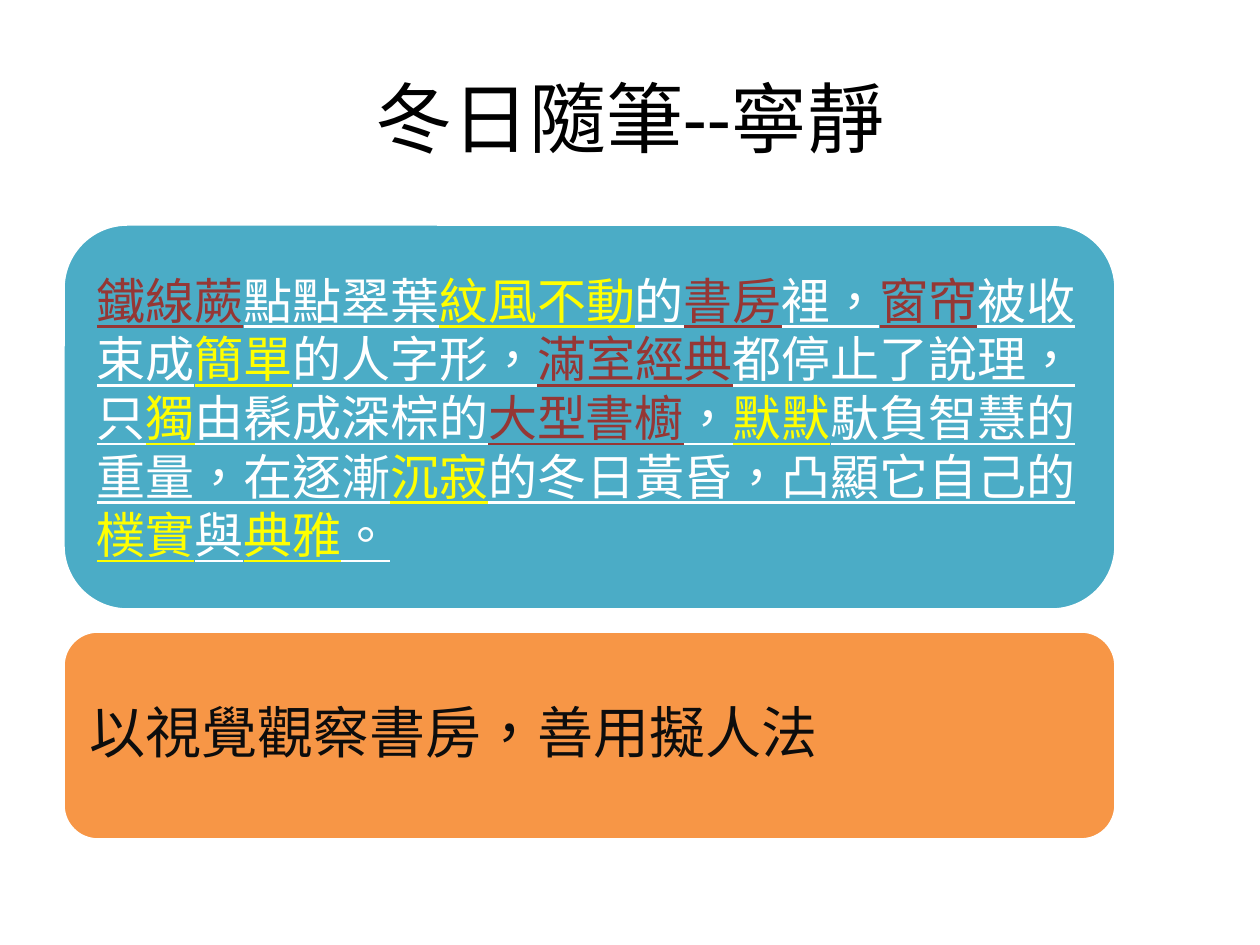
from pptx import Presentation
from pptx import util as u
from pptx.dml.color import RGBColor
from pptx.enum import lang, shapes, text
from pptx.oxml.ns import qn
from lxml import etree

EMU_PER_PX = 914400 / 126
BLACK = RGBColor(0x00, 0x00, 0x00)
WHITE = RGBColor(0xFF, 0xFF, 0xFF)
TEAL = RGBColor(0x4B, 0xAC, 0xC6)
ORANGE = RGBColor(0xF7, 0x96, 0x46)
RED = RGBColor(0x95, 0x37, 0x35)
YELLOW = RGBColor(0xFF, 0xFF, 0x00)
INK = RGBColor(0x0D, 0x0D, 0x0D)
HAN_FONT = "Noto Sans CJK SC"

TITLE = "冬日隨筆--寧靜"
# Objects in the study are red, words of stillness are yellow
PASSAGE = [
    ("鐵線蕨", RED), ("點點翠葉", WHITE), ("紋風不動", YELLOW), ("的", WHITE),
    ("書房", RED), ("裡，", WHITE), ("窗帘", RED), ("被收束成", WHITE),
    ("簡單", YELLOW), ("的人字形，", WHITE), ("滿室經典", RED),
    ("都停止了說理，只", WHITE), ("獨", YELLOW), ("由髹成深棕的", WHITE),
    ("大型書櫥", RED), ("，", WHITE), ("默默", YELLOW),
    ("馱負智慧的重量，在逐漸", WHITE), ("沉寂", YELLOW),
    ("的冬日黃昏，凸顯它自己的", WHITE), ("樸實", YELLOW), ("與", WHITE),
    ("典雅", YELLOW), ("。", WHITE),
]
COMMENT = [("以視覺觀察書房，善用擬人法", INK)]


def px(length):
    return u.Emu(round(length * EMU_PER_PX))


def set_format(target, values):
    for name, value in values.items():
        setattr(target, name, value)


def add_phrase(paragraph, phrase, colour, font_format):
    run = paragraph.add_run()
    run.text = phrase
    set_format(run.font, font_format)
    run.font.language_id = lang.MSO_LANGUAGE_ID.TRADITIONAL_CHINESE
    run.font.color.rgb = colour
    if font_format["name"] == HAN_FONT:
        east_asian = etree.Element(qn("a:ea"), typeface=HAN_FONT)
        run.font._element.find(qn("a:latin")).addnext(east_asian)


def write_title(slide):
    title = slide.shapes.title
    set_format(title, {"left": px(63), "top": px(38),
                       "width": px(1134), "height": px(158)})
    title.text_frame.vertical_anchor = text.MSO_ANCHOR.MIDDLE
    paragraph = title.text_frame.paragraphs[0]
    paragraph.alignment = text.PP_ALIGN.CENTER
    add_phrase(paragraph, TITLE, BLACK, {"name": "Calibri", "size": u.Pt(44)})


def add_panel(slide, top, height, fill, phrases, inset, font_format, spacing):
    panel = slide.shapes.add_shape(shapes.MSO_SHAPE.ROUNDED_RECTANGLE,
                                   px(63), px(top), px(1053), px(height))
    panel.shadow.inherit = False
    panel.fill.solid()
    panel.fill.fore_color.rgb = fill
    panel.line.color.rgb = WHITE
    panel.line.width = u.Pt(2)

    frame = panel.text_frame
    margins = ("margin_left", "margin_top", "margin_right", "margin_bottom")
    set_format(frame, dict.fromkeys(margins, px(inset)))
    set_format(frame, {"word_wrap": True,
                       "vertical_anchor": text.MSO_ANCHOR.MIDDLE})
    paragraph = frame.paragraphs[0]
    set_format(paragraph, {"alignment": text.PP_ALIGN.LEFT,
                           "line_spacing": spacing})
    for phrase, colour in phrases:
        add_phrase(paragraph, phrase, colour, font_format)


def main():
    deck = Presentation()
    deck.slide_width, deck.slide_height = px(1260), px(945)
    slide = deck.slides.add_slide(deck.slide_layouts[5])
    write_title(slide)
    # Passage from the essay
    add_panel(slide, 224, 386, TEAL, PASSAGE, 15,
              {"name": HAN_FONT, "size": u.Pt(28), "underline": True},
              u.Pt(33.5))
    # Remark on its technique
    add_panel(slide, 631, 209, ORANGE, COMMENT, 16,
              {"name": HAN_FONT, "size": u.Pt(32)}, 0.9)
    deck.save("out.pptx")


if __name__ == "__main__":
    main()
